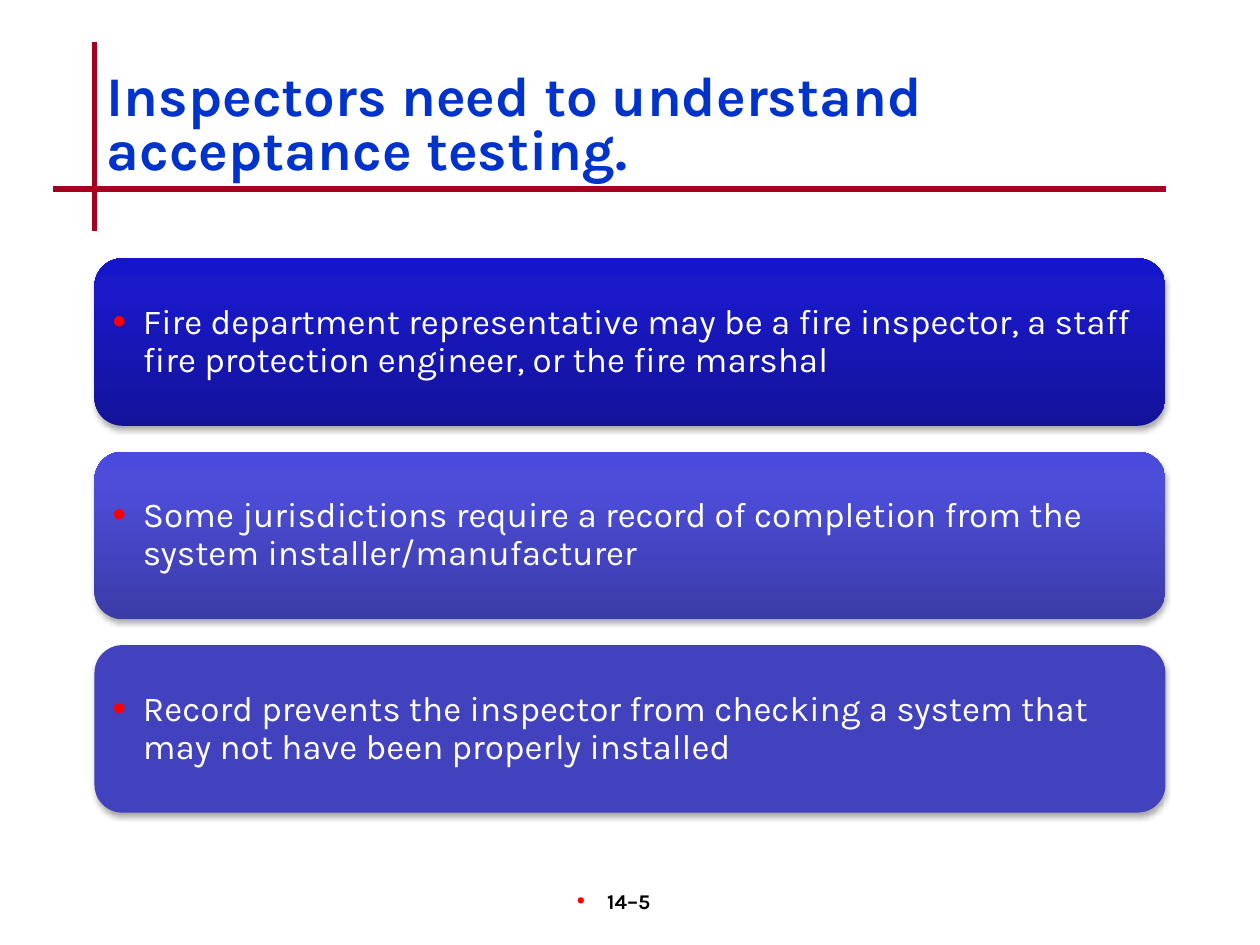
from lxml import etree
from pptx import Presentation
from pptx.dml.color import RGBColor
from pptx.enum.shapes import MSO_CONNECTOR, MSO_SHAPE
from pptx.enum.text import MSO_ANCHOR, PP_ALIGN
from pptx.oxml.ns import qn
from pptx.util import Inches, Pt

LINE = MSO_CONNECTOR.STRAIGHT
ROUND = MSO_SHAPE.ROUNDED_RECTANGLE
LEFT, CENTER = PP_ALIGN.LEFT, PP_ALIGN.CENTER
TOP, MIDDLE, BOTTOM = MSO_ANCHOR.TOP, MSO_ANCHOR.MIDDLE, MSO_ANCHOR.BOTTOM

TITLE = "Inspectors need to understand acceptance testing."
PAGE = "14–5"
CARDS = [
    ("Fire department representative may be a fire inspector, a staff "
     "fire protection engineer, or the fire marshal",
     [(0, "13139A"), (80, "1919C8"), (100, "1515CC")]),
    ("Some jurisdictions require a record of completion from the "
     "system installer/manufacturer",
     [(0, "3B3BA8"), (80, "4D4DDA"), (100, "4A4ADE")]),
    ("Record prevents the inspector from checking a system that "
     "may not have been properly installed",
     [(0, "4242BF")]),
]
RULES = [(0.75, 0.33, 0.75, 1.83), (0.42, 1.5, 9.25, 1.5)]
SIDE, WIDE, HIGH = 0.75, 8.5, 1.33
FIRST, LAST = 2.05, 5.12
HANG = 0.24

TITLE_FONT = {"size": Pt(32), "bold": True, "color": "0033CC"}
CARD_FONT = {"size": Pt(20), "bold": False, "color": "FFFFFF"}
PAGE_FONT = {"size": Pt(12), "bold": True, "color": "000000"}


def rgb(code):
    return RGBColor.from_string(code)


def add(node, tag, **attrs):
    return etree.SubElement(node, qn(tag), {k: str(v) for k, v in attrs.items()})


def tint(node, code):
    return add(node, "a:srgbClr", val=code)


def bullet(para):
    props = para._p.get_or_add_pPr()
    props.set("marL", str(Inches(HANG)))
    props.set("indent", str(-Inches(HANG)))
    tint(add(props, "a:buClr"), "FF0000")
    add(props, "a:buSzPct", val=110000)
    add(props, "a:buFont", typeface="Arial")
    add(props, "a:buChar", char="•")


def write(shape, text, style, align, anchor, pads, space=1.0, dot=False):
    frame = shape.text_frame
    frame.word_wrap = True
    frame.vertical_anchor = anchor
    for side, pad in zip(("left", "top", "right", "bottom"), pads):
        setattr(frame, "margin_" + side, Inches(pad))
    para = frame.paragraphs[0]
    para.alignment = align
    para.line_spacing = space
    if dot:
        bullet(para)
    run = para.add_run()
    run.text = text
    run.font.name = "Karla"
    for key, value in style.items():
        if key == "color":
            run.font.color.rgb = rgb(value)
        else:
            setattr(run.font, key, value)


def paint(shape, stops):
    """Fill with one colour, or with a gradient that rises from the bottom."""
    shape.fill.solid()
    shape.fill.fore_color.rgb = rgb(stops[0][1])
    shape.line.fill.background()
    if len(stops) > 1:
        grad = etree.Element(qn("a:gradFill"), rotWithShape="1")
        group = add(grad, "a:gsLst")
        for place, code in stops:
            tint(add(group, "a:gs", pos=place * 1000), code)
        add(grad, "a:lin", ang=270 * 60000, scaled=0)
        props = shape._element.spPr
        props.replace(props.find(qn("a:solidFill")), grad)


def shade(shape):
    shape.shadow.inherit = False
    effects = shape._element.spPr.find(qn("a:effectLst"))
    drop = add(effects, "a:outerShdw", blurRad=Pt(3.1), dist=Pt(1.8),
               dir=90 * 60000, rotWithShape=0)
    add(tint(drop, "000000"), "a:alpha", val=35000)


def main():
    deck = Presentation()
    deck.slide_width, deck.slide_height = Inches(10), Inches(7.5)
    shapes = deck.slides.add_slide(deck.slide_layouts[6]).shapes

    for ends in RULES:
        rule = shapes.add_connector(LINE, *map(Inches, ends))
        rule.line.color.rgb = rgb("A50021")
        rule.line.width = Pt(3)
        add(rule._element.spPr, "a:effectLst")

    page = shapes.add_textbox(*map(Inches, (3.92, 7, 2.08, 0.5)))
    write(page, PAGE, PAGE_FONT, CENTER, TOP, (0, 0.05, 0.18, 0.05), dot=True)
    title = shapes.add_textbox(*map(Inches, (SIDE, 0.55, WIDE, 1)))
    # The bottom inset lifts the descenders off the rule.
    write(title, TITLE, TITLE_FONT, LEFT, BOTTOM, (0.1, 0.05, 0.1, 0.11), 0.8)

    step = (LAST - FIRST) / (len(CARDS) - 1)
    for i, (text, stops) in enumerate(CARDS):
        place = (SIDE, FIRST + i * step, WIDE, HIGH)
        card = shapes.add_shape(ROUND, *map(Inches, place))
        paint(card, stops)
        shade(card)
        # The rounded corner adds its own inset of about 0.06 inch.
        write(card, text, CARD_FONT, LEFT, MIDDLE, [0.08] * 4, 0.9, True)

    deck.save("out.pptx")


if __name__ == "__main__":
    main()
